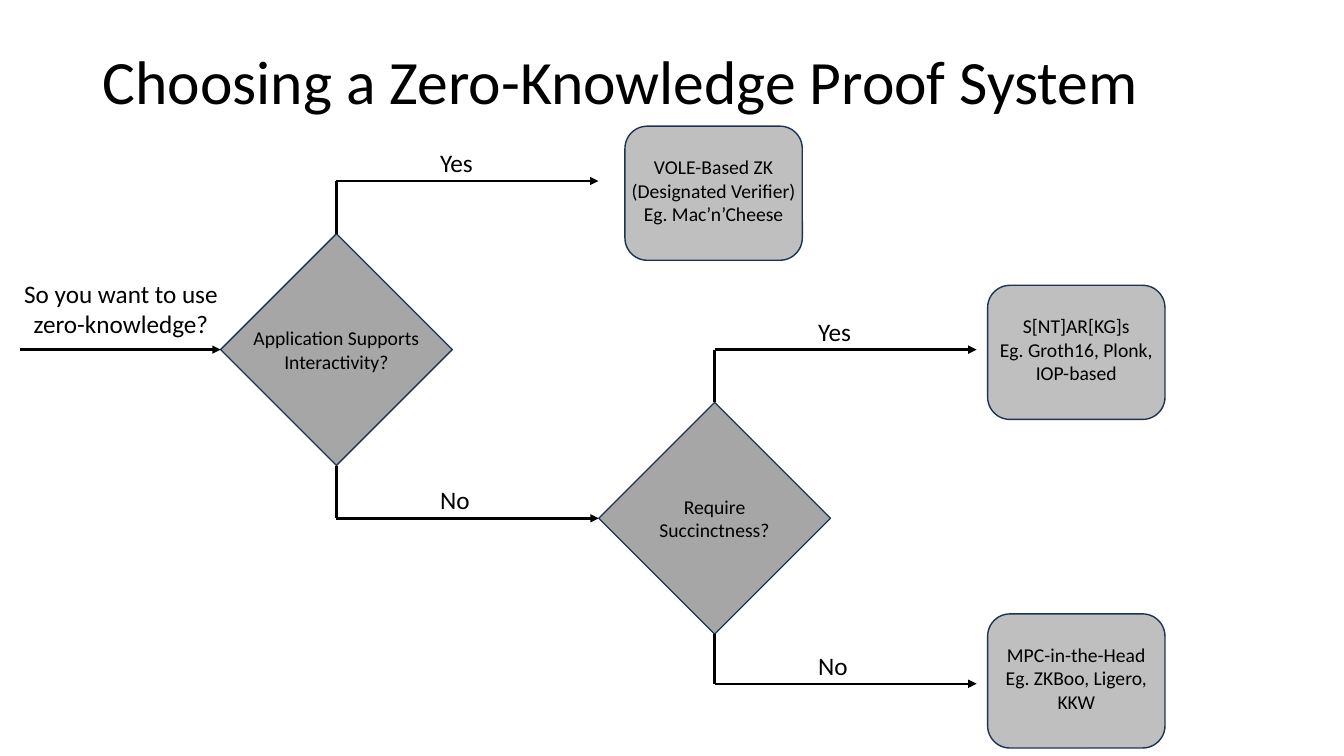
from lxml import etree
from pptx import Presentation
from pptx import util as u
from pptx.dml.color import RGBColor
from pptx.enum import shapes, text
from pptx.oxml.ns import qn

# Content (lengths in cm)
COLORS = {"ink": "000000", "question": "A6A6A6", "outcome": "BFBFBF", "edge": "1E3256"}
FONT = "Calibri"
TITLE = "Choosing a Zero-Knowledge Proof System"
START = "So you want to use zero-knowledge?"
QUESTIONS = [  # lines, centre x, centre y
    (["Application Supports", "Interactivity?"], 8.48, 8.81),
    (["Require", "Succinctness?"], 18.01, 13.06),
]
BRANCHES = [  # question, answer, height of the arrow from the centre, next question
    (0, "Yes", -4.25, None),
    (0, "No", 4.25, 1),
    (1, "Yes", -4.25, None),
    (1, "No", 4.17, None),
]
OUTCOMES = [  # lines, left, top, wrap
    (["VOLE-Based ZK", "(Designated Verifier)", "Eg. Mac’n’Cheese"], 15.75, 3.18, False),
    (["S[NT]AR[KG]s", "Eg. Groth16, Plonk, IOP-based"], 24.89, 7.19, True),
    (["MPC-in-the-Head", "Eg. ZKBoo, Ligero, KKW"], 24.89, 15.47, True),
]
DIAMOND = 5.84
OUTCOME_W, OUTCOME_H = 4.47, 3.38
BRANCH_RUN = 6.6
LABEL_DX, LABEL_DY = 2.36, 0.97

deck = Presentation()
deck.slide_width, deck.slide_height = u.Cm(33.87), u.Cm(19.05)
slide = deck.slides.add_slide(deck.slide_layouts[6])


def color(name):
    return RGBColor.from_string(COLORS[name])


def write(owner, lines, size, align, wrap=True, anchor="TOP", spacing=None, **margins):
    frame = owner.text_frame
    settings = {"word_wrap": wrap, "vertical_anchor": text.MSO_ANCHOR[anchor]}
    for side, length in margins.items():
        settings["margin_" + side] = u.Cm(length)
    for key, value in settings.items():
        setattr(frame, key, value)
    for i, line in enumerate(lines):
        paragraph = frame.add_paragraph() if i else frame.paragraphs[0]
        paragraph.text = line
        paragraph.alignment = text.PP_ALIGN[align]
        paragraph.line_spacing = spacing
        for key, value in {"name": FONT, "size": u.Pt(size)}.items():
            setattr(paragraph.font, key, value)
        paragraph.font.color.rgb = color("ink")


def text_box(left, top, width, height, *args, **formats):
    box = slide.shapes.add_textbox(*map(u.Cm, (left, top, width, height)))
    write(box, *args, **formats)


def node(kind, left, top, width, height, fill):
    shape = slide.shapes.add_shape(kind, *map(u.Cm, (left, top, width, height)))
    shape.shadow.inherit = False
    shape.fill.solid()
    shape.fill.fore_color.rgb = color(fill)
    shape.line.color.rgb = color("edge")
    shape.line.width = u.Pt(1)
    return shape


def line(x1, y1, x2, y2, arrow=False):
    link = slide.shapes.add_connector(shapes.MSO_CONNECTOR.STRAIGHT, *map(u.Cm, (x1, y1, x2, y2)))
    link.line.color.rgb = color("ink")
    link.line.width = u.Pt(1.75)
    properties = link._element.spPr
    if arrow:
        etree.SubElement(properties.find(qn("a:ln")), qn("a:tailEnd"), type="triangle")
    etree.SubElement(properties, qn("a:effectLst"))
    return link


# Title
text_box(2.34, 0.3, 29.21, 3.68, [TITLE], 44, "LEFT", anchor="MIDDLE", spacing=0.9)

# Questions
diamonds = []
for lines, x, y in QUESTIONS:
    diamond = node(shapes.MSO_SHAPE.DIAMOND, x - DIAMOND / 2, y - DIAMOND / 2,
                   DIAMOND, DIAMOND, "question")
    write(diamond, lines, 14, "CENTER", wrap=False, anchor="MIDDLE")
    diamonds.append(diamond)

# Outcomes
for lines, left, top, wrap in OUTCOMES:
    outcome = node(shapes.MSO_SHAPE.ROUNDED_RECTANGLE, left, top, OUTCOME_W, OUTCOME_H, "outcome")
    write(outcome, lines, 14, "CENTER", wrap=wrap, anchor="MIDDLE",
          left=0.05, right=0.05, top=0, bottom=0.15)

# Start
_, first_x, first_y = QUESTIONS[0]
text_box(0.33, 6.88, 5.44, 1.8, [START], 18, "CENTER")
line(0.51, first_y, first_x - DIAMOND / 2, first_y, arrow=True).end_connect(diamonds[0], 1)

# Branches: a stem out of the question, then an arrow to the right
for source, answer, rise, target in BRANCHES:
    _, x, y = QUESTIONS[source]
    level = y + rise
    corner = y + (DIAMOND / 2 if rise > 0 else -DIAMOND / 2)
    line(x, corner, x, level).begin_connect(diamonds[source], 2 if rise > 0 else 0)
    arrow = line(x, level, x + BRANCH_RUN, level, arrow=True)
    if target is not None:
        arrow.end_connect(diamonds[target], 1)
    text_box(x + LABEL_DX, level - LABEL_DY, 1.35, 1.02, [answer], 18, "LEFT", wrap=False)

deck.save("out.pptx")
